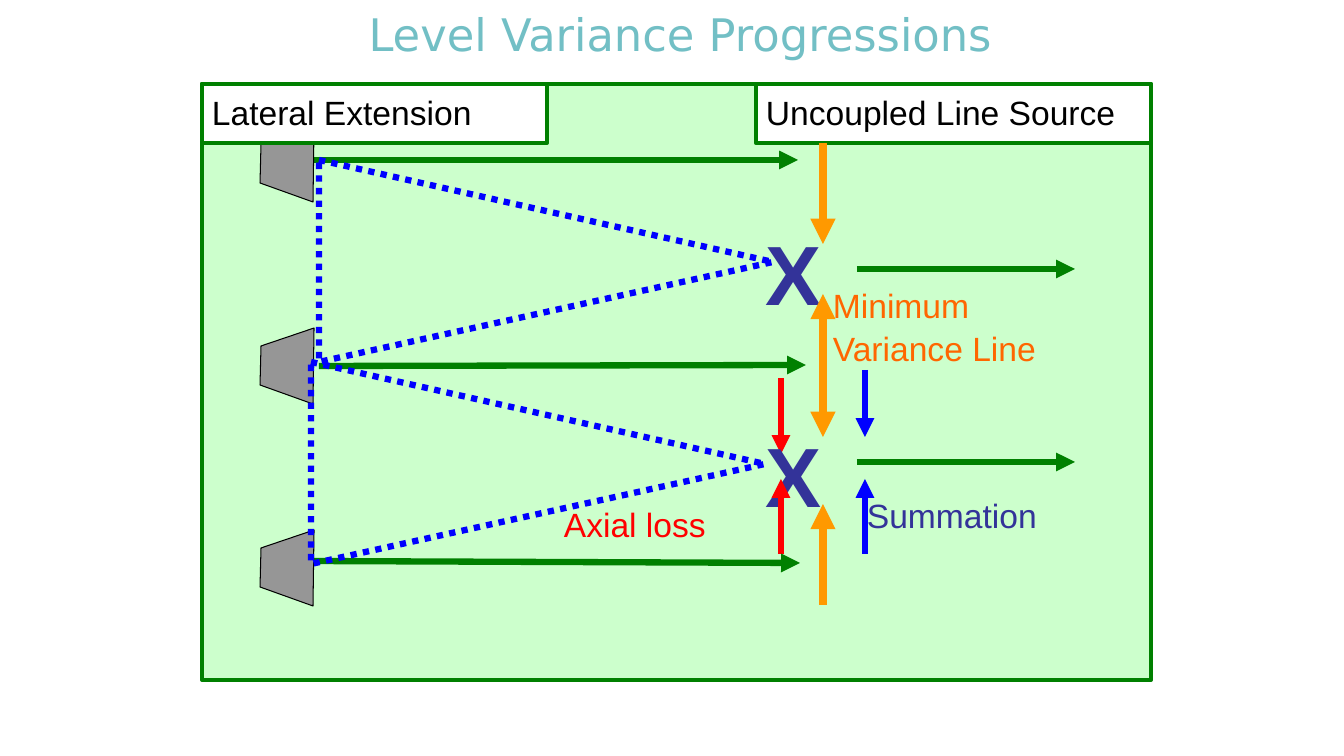
from lxml import etree
from pptx import Presentation
from pptx.dml.color import RGBColor
from pptx.enum.dml import MSO_LINE
from pptx.enum.shapes import MSO_CONNECTOR, MSO_SHAPE
from pptx.enum.text import MSO_ANCHOR, PP_ALIGN
from pptx.oxml.ns import qn
from pptx.util import Emu, Pt

STRAIGHT = MSO_CONNECTOR.STRAIGHT
RECTANGLE = MSO_SHAPE.RECTANGLE
TRIANGLE = MSO_SHAPE.ISOSCELES_TRIANGLE
DOTTED = MSO_LINE.ROUND_DOT
TOP, MIDDLE = MSO_ANCHOR.TOP, MSO_ANCHOR.MIDDLE
LEFT, CENTER = PP_ALIGN.LEFT, PP_ALIGN.CENTER

EMU_PER_PX = 914400 / 100.8
COLORS = {
    "title": "72BFC5", "panel": "CCFFCC", "green": "008000", "white": "FFFFFF",
    "black": "000000", "red": "FF0000", "indigo": "333399", "dark orange": "FF6600",
    "orange": "FF9900", "blue": "0000FF", "gray": "969696",
}


def px(length):
    return Emu(round(length * EMU_PER_PX))


def color(name):
    return RGBColor.from_string(COLORS[name])


class Diagram:
    font = "Arial"
    text_size = 24
    line_spacing = 1.07

    def __init__(self, slide):
        self.slide = slide

    def style(self, shape, fill, line, width):
        shape.shadow.inherit = False
        if fill:
            shape.fill.solid()
            shape.fill.fore_color.rgb = color(fill)
        else:
            shape.fill.background()
        shape.line.color.rgb = color(line)
        shape.line.width = Pt(width)

    def set_text(self, shape, text, ink, size=None, font=None, bold=False,
                 align=LEFT, anchor=TOP, spacing=None):
        frame = shape.text_frame
        frame.word_wrap = True
        frame.vertical_anchor = anchor
        frame.text = text
        paragraph = frame.paragraphs[0]
        paragraph.alignment = align
        paragraph.line_spacing = spacing or self.line_spacing
        run_font = paragraph.runs[0].font
        run_font.name = font or self.font
        run_font.size = Pt(size or self.text_size)
        run_font.bold = bold
        run_font.color.rgb = color(ink)

    def box(self, left, top, width, height, fill, text=None):
        shape = self.slide.shapes.add_shape(
            RECTANGLE, px(left), px(top), px(width), px(height))
        self.style(shape, fill, "green", 3)
        if text:
            self.set_text(shape, text, "black")

    def label(self, left, top, width, height, text, ink, **options):
        shape = self.slide.shapes.add_textbox(px(left), px(top), px(width), px(height))
        self.set_text(shape, text, ink, **options)

    def arrow(self, start, end, ink, width=4.5, double=False):
        connector = self.slide.shapes.add_connector(
            STRAIGHT, *(px(value) for value in (*start, *end)))
        connector.line.color.rgb = color(ink)
        connector.line.width = Pt(width)
        properties = connector._element.spPr
        line = properties.find(qn("a:ln"))
        for tag in ("a:headEnd", "a:tailEnd") if double else ("a:tailEnd",):
            etree.SubElement(line, qn(tag), type="triangle")
        etree.SubElement(properties, qn("a:effectLst"))

    def speaker(self, top):
        corners = [(313, 76), (260, 57), (261, 18), (314, 0)]
        points = [(px(x), px(top + y)) for x, y in corners]
        builder = self.slide.shapes.build_freeform(*points[0], scale=1)
        builder.add_line_segments(points[1:], close=True)
        self.style(builder.convert_to_shape(), "gray", "black", 0.75)

    def coverage(self, left, top):
        """Dotted triangle pointing right, from two speakers to their meeting point."""
        length, spread = 454, 202
        offset = (length - spread) // 2
        shape = self.slide.shapes.add_shape(
            TRIANGLE, px(left + offset), px(top - offset), px(spread), px(length))
        shape.adjustments[0] = 0.505
        shape.rotation = 90
        self.style(shape, None, "blue", 4.5)
        shape.line.dash_style = DOTTED


def main():
    presentation = Presentation()
    presentation.slide_width, presentation.slide_height = px(1344), px(756)
    slide = presentation.slides.add_slide(presentation.slide_layouts[6])
    diagram = Diagram(slide)
    pitch = 202
    axial_x, variance_x, summation_x = 781, 823, 865

    diagram.box(202, 84, 949, 596, "panel")
    diagram.label(252, 0, 857, 67, "Level Variance Progressions", "title", size=32,
                  font="DejaVu Sans", align=CENTER, anchor=MIDDLE, spacing=1.0)
    diagram.box(756, 84, 395, 59, "white", "Uncoupled Line Source")

    diagram.label(554, 496, 247, 38, "Axial loss", "red")
    diagram.label(857, 487, 256, 38, "Summation", "indigo")
    diagram.label(823, 277, 277, 62, "Minimum Variance Line", "dark orange")

    diagram.arrow((axial_x, 378), (axial_x, 454), "red")
    for top in (210, 210 + pitch):
        diagram.label(756, top, 132, 62, "X", "indigo", size=60, bold=True)
    diagram.arrow((axial_x, 554), (axial_x, 479), "red")

    diagram.arrow((variance_x, 143), (variance_x, 244), "orange", 6)
    diagram.arrow((variance_x, 294), (variance_x, 437), "orange", 6, double=True)
    diagram.arrow((variance_x, 605), (variance_x, 504), "orange", 6)
    diagram.arrow((summation_x, 370), (summation_x, 437), "blue")
    diagram.arrow((summation_x, 554), (summation_x, 479), "blue")

    for start, end in [
        ((311, 160), (798, 160)), ((319, 366), (806, 365)), ((307, 561), (800, 563)),
        ((857, 269), (1075, 269)), ((857, 462), (1075, 462)),
    ]:
        diagram.arrow(start, end, "green")

    for row in range(3):
        diagram.speaker(126 + row * pitch)
    for left, top in ((319, 160), (311, 160 + pitch)):
        diagram.coverage(left, top)
    diagram.box(202, 84, 345, 59, "white", "Lateral Extension")

    presentation.save("out.pptx")


if __name__ == "__main__":
    main()
